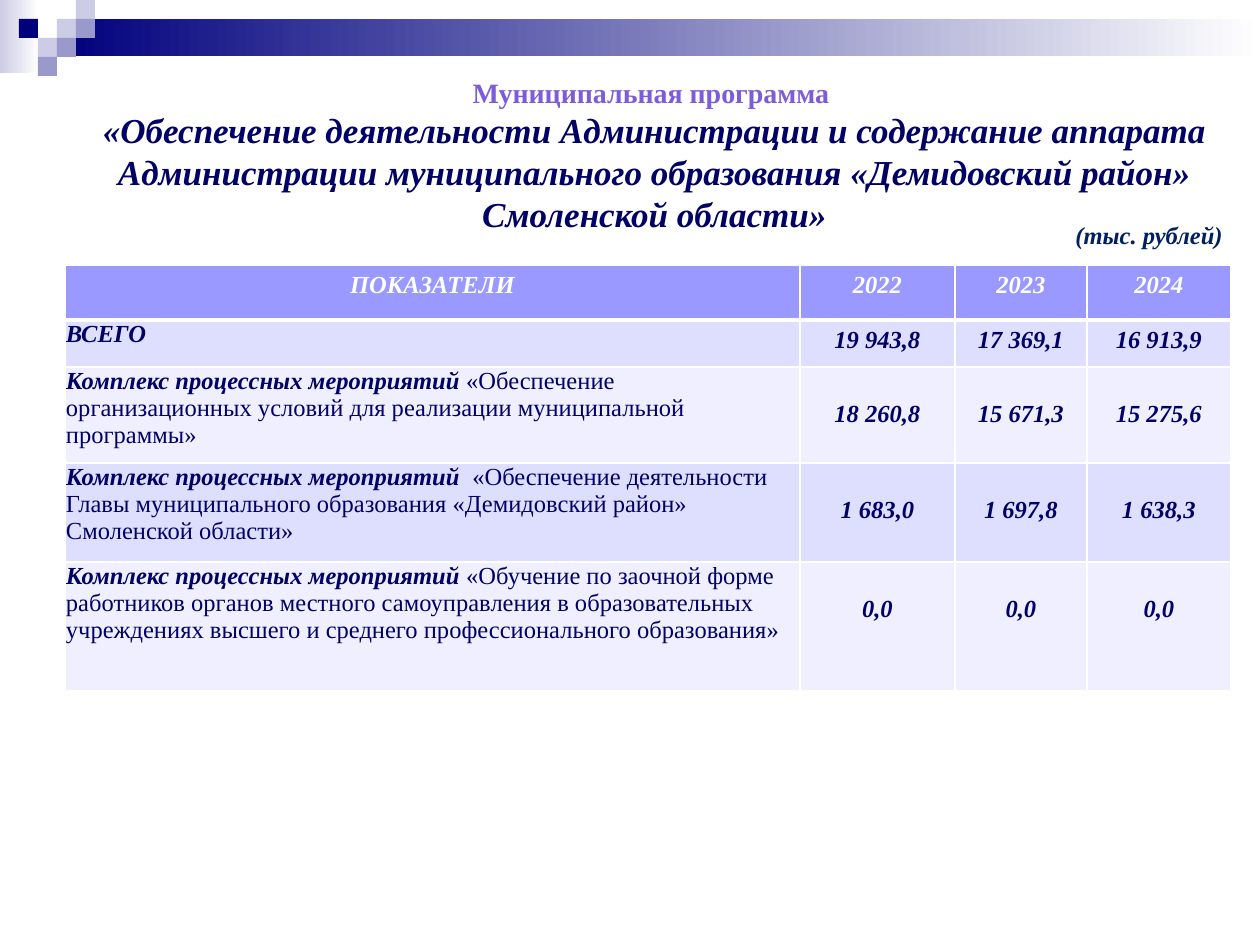
import pptx
import pptx.util
import pptx.dml.color
import pptx.enum.shapes
import pptx.enum.text
import pptx.oxml
import pptx.oxml.ns

ALIGN = pptx.enum.text.PP_ALIGN
NAVY = "000066"
WHITE = "FFFFFF"


def px(n):
    return pptx.util.Emu(round(n * 914400 / 126))


def rgb(code):
    return pptx.dml.color.RGBColor.from_string(code)


class Deck:
    font = "Times New Roman"
    size = 14

    def __init__(self):
        self.prs = pptx.Presentation()
        self.prs.slide_width = px(1260)
        self.prs.slide_height = px(945)
        self.slide = self.prs.slides.add_slide(self.prs.slide_layouts[5])

    def run(self, para, text, color, size=None, bold=True, ital=True):
        run = para.add_run()
        run.text = text
        font = run.font
        font.name = self.font
        font.size = pptx.util.Pt(size or self.size)
        font.bold = bold
        font.italic = ital
        font.color.rgb = rgb(color)

    def rect(self, x, y, w, h, *colors):
        kind = pptx.enum.shapes.MSO_SHAPE.RECTANGLE
        box = self.slide.shapes.add_shape(kind, px(x), px(y), px(w), px(h))
        box.shadow.inherit = False
        box.line.fill.background()
        if len(colors) == 1:
            box.fill.solid()
            box.fill.fore_color.rgb = rgb(colors[0])
        else:
            box.fill.gradient()
            box.fill.gradient_angle = 0
            for stop, color in zip(box.fill.gradient_stops, colors):
                stop.color.rgb = rgb(color)

    def title(self, x, y, w, h, lines):
        box = self.slide.shapes.title
        box.left, box.top, box.width, box.height = px(x), px(y), px(w), px(h)
        frame = box.text_frame
        frame.word_wrap = True
        frame.auto_size = pptx.enum.text.MSO_AUTO_SIZE.NONE
        frame.vertical_anchor = pptx.enum.text.MSO_ANCHOR.TOP
        for i, line in enumerate(lines):
            para = frame.add_paragraph() if i else frame.paragraphs[0]
            para.alignment = ALIGN.CENTER
            self.run(para, *line)

    def label(self, x, y, w, h, text, color):
        box = self.slide.shapes.add_textbox(px(x), px(y), px(w), px(h))
        box.text_frame.word_wrap = True
        self.run(box.text_frame.paragraphs[0], text, color)

    def edge(self, cell, side, width):
        xml = (f'<a:{side} {pptx.oxml.ns.nsdecls("a")} w="{width * 12700}">'
               f'<a:solidFill><a:srgbClr val="{WHITE}"/></a:solidFill></a:{side}>')
        cell._tc.get_or_add_tcPr().append(pptx.oxml.parse_xml(xml))

    def cell(self, cell, runs, fill, color, left=False, drop=0, head=False):
        for side in ("lnL", "lnR", "lnT", "lnB"):
            self.edge(cell, side, 3 if head and side == "lnB" else 1)
        cell.fill.solid()
        cell.fill.fore_color.rgb = rgb(fill)
        if left:
            cell.margin_left = cell.margin_right = cell.margin_top = px(1)
            cell.margin_bottom = 0
        elif drop:
            cell.margin_top = px(drop)
        para = cell.text_frame.paragraphs[0]
        para.alignment = ALIGN.LEFT if left else ALIGN.CENTER
        for text, strong in runs:
            self.run(para, text, color, bold=strong, ital=strong)

    def table(self, x, y, cols, rows, data):
        grid = self.slide.shapes.add_table(
            len(rows), len(cols), px(x), px(y), px(sum(cols)), px(sum(rows))).table
        for col, w in zip(grid.columns, cols):
            col.width = px(w)
        for row, h in zip(grid.rows, rows):
            row.height = px(h)
        for r, (name, *vals) in enumerate(data):
            head = r == 0
            fill = "9999FF" if head else ("EFEFFF", "DEDEFF")[r % 2]
            color = WHITE if head else NAVY
            drop = 34 if r > 1 else 0
            self.cell(grid.cell(r, 0), name, fill, color, left=not head, head=head)
            for c, val in enumerate(vals, 1):
                self.cell(grid.cell(r, c), [(val, True)], fill, color,
                          drop=drop, head=head)


def main():
    deck = Deck()
    deck.rect(0, 0, 39, 73, "CCCCE6", WHITE)
    deck.rect(57, 19, 1203, 37, "00007D", WHITE)
    unit = 19
    pale, mid, dark = "CCCCE6", "9999CC", "00007D"
    for col, row, color in [(3, 1, pale), (4, 0, pale), (4, 1, mid), (2, 2, pale),
                            (1, 1, dark), (3, 2, mid), (2, 3, mid)]:
        deck.rect(col * unit, row * unit, unit, unit, color)

    deck.title(44, 69, 1221, 174, [
        ("Муниципальная программа ", "7D5CDA", 16, True, False),
        ("«Обеспечение деятельности Администрации и содержание аппарата "
         "Администрации муниципального образования «Демидовский район» "
         "Смоленской области»", NAVY, 20)])

    lead = ("Комплекс процессных мероприятий ", True)
    deck.table(65, 265, [735, 155, 132, 144], [55, 47, 96, 99, 129], [
        ([("ПОКАЗАТЕЛИ", True)], "2022", "2023", "2024"),
        ([("ВСЕГО", True)], "19 943,8", "17 369,1", "16 913,9"),
        ([lead, ("«Обеспечение организационных условий для реализации "
                 "муниципальной программы»", False)],
         "18 260,8", "15 671,3", "15 275,6"),
        ([lead, (" «Обеспечение деятельности Главы муниципального образования "
                 "«Демидовский район» Смоленской области»", False)],
         "1 683,0", "1 697,8", "1 638,3"),
        ([lead, ("«Обучение по заочной форме работников органов местного "
                 "самоуправления в образовательных учреждениях высшего и среднего "
                 "профессионального образования»", False)],
         "0,0", "0,0", "0,0")])
    deck.label(1063, 214, 181, 43, "(тыс. рублей)", "002060")
    deck.prs.save("out.pptx")


if __name__ == "__main__":
    main()
